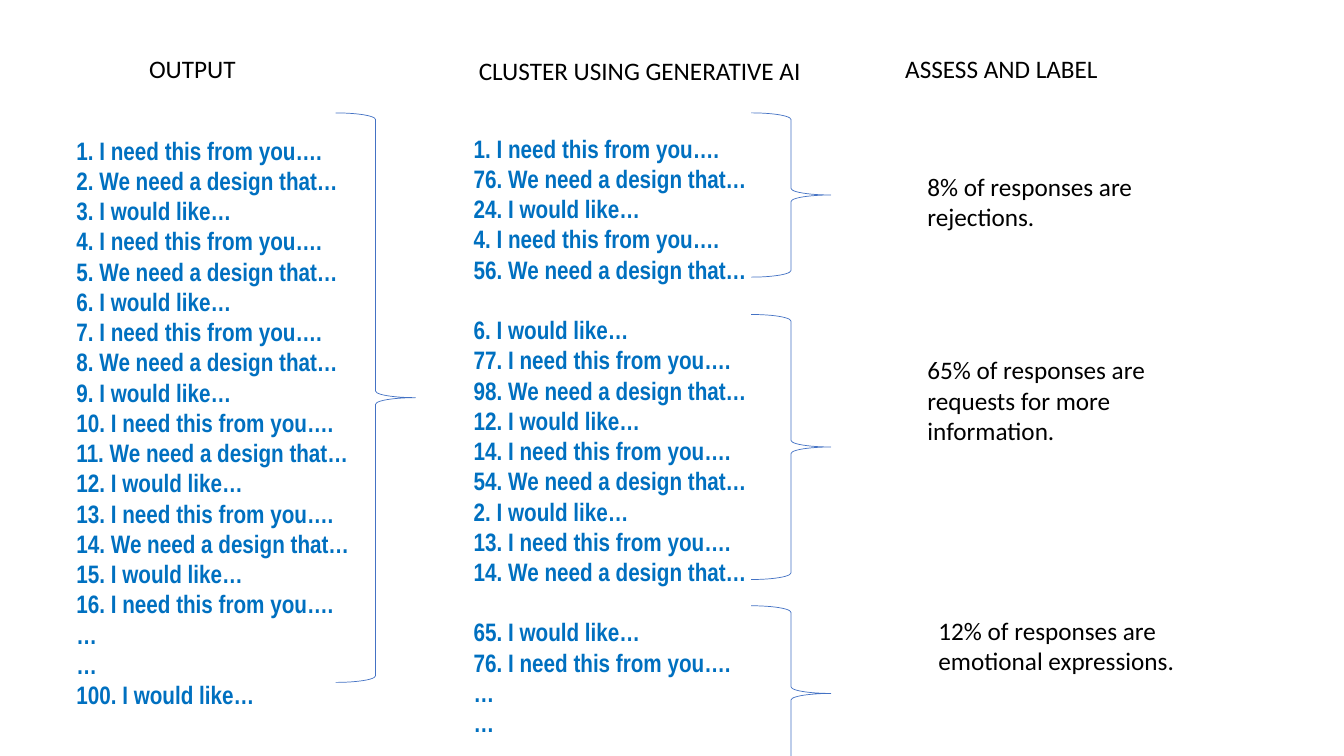
from itertools import cycle

from pptx import Presentation
from pptx.dml.color import RGBColor
from pptx.enum import shapes, text
from pptx.util import Inches, Pt

BLACK = RGBColor(0x00, 0x00, 0x00)
RESPONSE_BLUE = RGBColor(0x00, 0x70, 0xC0)
BRACE_BLUE = RGBColor(0x44, 0x72, 0xC4)
PHRASES = ["I need this from you….", "We need a design that…", "I would like…"]
CLUSTER_GAP = Pt(21.6)

deck = Presentation()
deck.slide_width = Inches(13.33)
deck.slide_height = Inches(7.5)
page = deck.slides.add_slide(deck.slide_layouts[6])


def add_text(left, top, width, height, lines, font="Calibri", color=BLACK, bold=False):
    box = page.shapes.add_textbox(Inches(left), Inches(top), Inches(width), Inches(height))
    frame = box.text_frame
    frame.word_wrap = True
    frame.auto_size = text.MSO_AUTO_SIZE.SHAPE_TO_FIT_TEXT
    for index, line in enumerate(lines):
        para = frame.add_paragraph() if index else frame.paragraphs[0]
        span = para.add_run()
        span.text = line
        span.font.name = font
        span.font.size = Pt(18)
        span.font.bold = bold
        span.font.color.rgb = color
    return frame


def add_brace(left, top, height):
    brace = page.shapes.add_shape(
        shapes.MSO_SHAPE.RIGHT_BRACE, Inches(left), Inches(top), Inches(0.79), Inches(height))
    brace.shadow.inherit = False
    brace.fill.background()
    brace.line.color.rgb = BRACE_BLUE
    brace.line.width = Pt(0.5)


# Clustered responses, with a gap before each later cluster
clusters = [[1, 76, 24, 4, 56], [6, 77, 98, 12, 14, 54, 2, 13, 14], [65, 76]]
numbers = [number for cluster in clusters for number in cluster]
clustered = [f"{number}. {phrase}" for number, phrase in zip(numbers, cycle(PHRASES))]
cluster_frame = add_text(4.6, 1.27, 6.67, 6.77, clustered + ["…", "…"],
                         "Arial Narrow", RESPONSE_BLUE, True)
start = 0
for cluster in clusters[:-1]:
    start += len(cluster)
    cluster_frame.paragraphs[start].space_before = CLUSTER_GAP

# Raw output responses
output = [f"{number}. {phrase}" for number, phrase in zip(range(1, 17), cycle(PHRASES))]
add_text(0.66, 1.29, 6.67, 6.16, output + ["…", "…", "100. I would like…"],
         "Arial Narrow", RESPONSE_BLUE, True)

# Braces: all output, then one for each cluster
for left, top, height in [(3.33, 1.12, 5.65), (7.45, 1.12, 1.63),
                          (7.45, 3.12, 2.63), (7.45, 6.01, 1.74)]:
    add_brace(left, top, height)

# Column headings and cluster labels
for left, top, width, height, wording in [
    (1.38, 0.48, 2.46, 0.4, "OUTPUT"),
    (4.65, 0.5, 3.41, 0.4, "CLUSTER USING GENERATIVE AI"),
    (8.88, 0.48, 2.46, 0.4, "ASSESS AND LABEL"),
    (9.1, 1.65, 2.46, 0.71, "8% of responses are rejections."),
    (9.1, 3.47, 2.46, 1.01, "65% of responses are requests for more information."),
    (9.21, 6.05, 2.8, 0.71, "12% of responses are emotional expressions."),
]:
    add_text(left, top, width, height, [wording])

deck.save("out.pptx")
